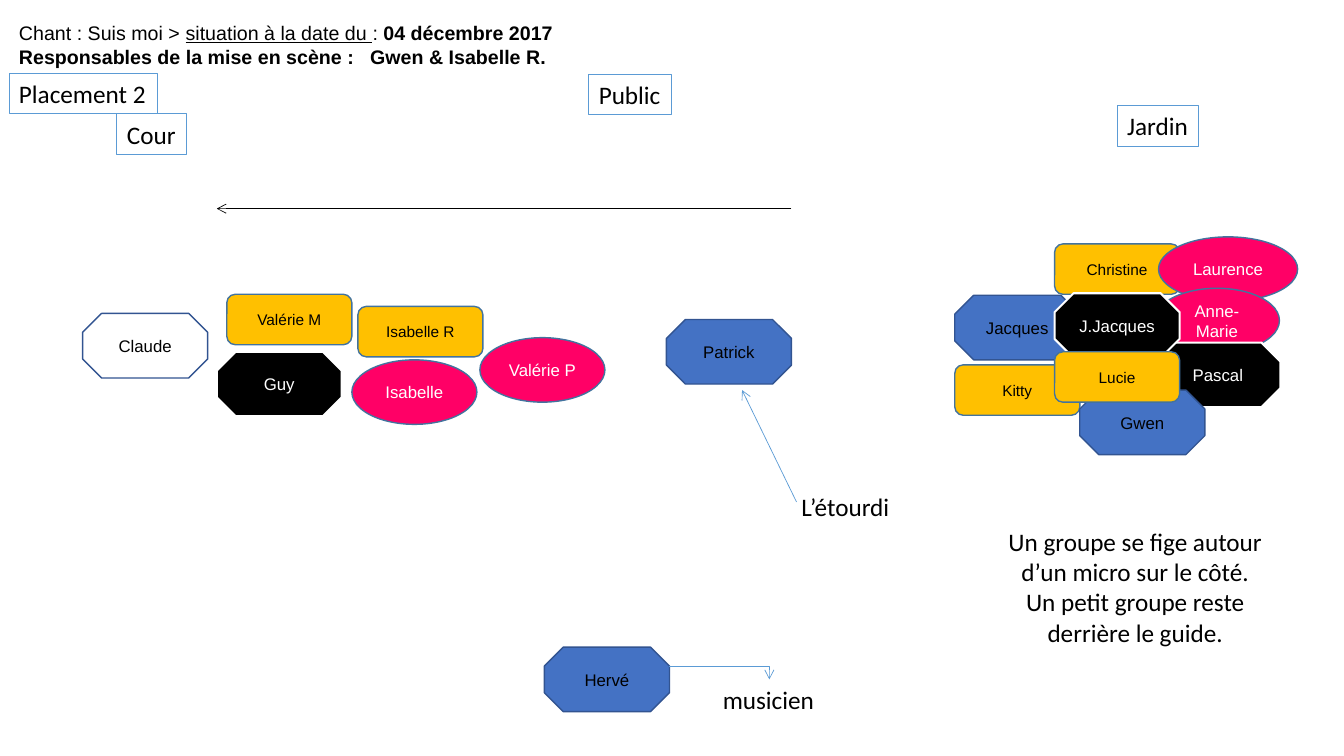
from lxml import etree
from pptx import Presentation
from pptx.dml.color import RGBColor
from pptx.enum.shapes import MSO_CONNECTOR, MSO_SHAPE
from pptx.enum.text import MSO_ANCHOR, MSO_AUTO_SIZE, PP_ALIGN
from pptx.oxml.ns import qn
from pptx.util import Inches, Pt

OCTAGON, OVAL = MSO_SHAPE.OCTAGON, MSO_SHAPE.OVAL
ROUNDED = MSO_SHAPE.ROUNDED_RECTANGLE
STRAIGHT, ELBOW = MSO_CONNECTOR.STRAIGHT, MSO_CONNECTOR.ELBOW
LEFT, CENTER = PP_ALIGN.LEFT, PP_ALIGN.CENTER

BLACK = RGBColor(0x00, 0x00, 0x00)
WHITE = RGBColor(0xFF, 0xFF, 0xFF)
BLUE = RGBColor(0x44, 0x72, 0xC4)
NAVY = RGBColor(0x32, 0x54, 0x91)
YELLOW = RGBColor(0xFF, 0xC0, 0x00)
PINK = RGBColor(0xFF, 0x00, 0x66)
STEEL = RGBColor(0x43, 0x73, 0x9E)
SKY = RGBColor(0x5B, 0x9B, 0xD5)

# Heading: paragraphs of (text, underline, bold)
HEADING = [
    [("Chant : Suis moi > ", False, False),
     ("situation à la date du ", True, False),
     (": ", False, False),
     ("04 décembre 2017", False, True)],
    [("Responsables de la mise en scène :   Gwen & Isabelle R.", False, True)],
]

# Labels: text, left, top, width, framed
LABELS = [
    ("Placement 2", 0.09, 0.73, 1.47, True),
    ("Public", 5.84, 0.74, 0.82, True),
    ("Jardin", 11.08, 1.05, 0.81, True),
    ("Cour", 1.16, 1.13, 0.69, True),
    ("L’étourdi", 7.85, 4.83, 1.08, False),
    ("musicien", 7.07, 6.74, 1.12, False),
]
STAGING = ["Un groupe se fige autour d’un micro sur le côté.",
           "Un petit groupe reste derrière le guide."]

# Voice groups: shape, height, fill, line, line width, text colour, text size
VOICES = {
    "blue": (OCTAGON, 0.64, BLUE, NAVY, 1, BLACK, 12),
    "white": (OCTAGON, 0.64, WHITE, NAVY, 1, BLACK, 12),
    "black": (OCTAGON, 0.64, BLACK, WHITE, 1.5, WHITE, 12),
    "yellow": (ROUNDED, 0.5, YELLOW, STEEL, 1, BLACK, 11),
    "pink": (OVAL, 0.64, PINK, STEEL, 1, WHITE, 12),
}
SINGER_WIDTH = 1.24
WIDER = {"Laurence": 1.38}

# Singers from back to front: name, voice, left, top
SINGERS = [
    ("Jacques", "blue", 9.47, 2.93),
    ("Guy", "black", 2.15, 3.49),
    ("Christine", "yellow", 10.46, 2.42),
    ("Isabelle", "pink", 3.49, 3.57),
    ("Kitty", "yellow", 9.47, 3.62),
    ("Valérie M", "yellow", 2.25, 2.92),
    ("Isabelle R", "yellow", 3.55, 3.04),
    ("Laurence", "pink", 11.49, 2.35),
    ("Valérie P", "pink", 4.76, 3.35),
    ("Anne-Marie", "pink", 11.45, 2.86),
    ("Pascal", "black", 11.46, 3.4),
    ("J.Jacques", "black", 10.46, 2.91),
    ("Patrick", "blue", 6.61, 3.17),
    ("Gwen", "blue", 10.71, 3.87),
    ("Lucie", "yellow", 10.46, 3.49),
    ("Claude", "white", 0.82, 3.11),
    ("Hervé", "blue", 5.4, 6.42),
]

# Arrows: kind, start, end, colour
ARROWS = [
    (STRAIGHT, (7.85, 2.07), (2.15, 2.07), BLACK),
    (STRAIGHT, (7.9, 4.98), (7.36, 3.87), SKY),
    (ELBOW, (6.64, 6.61), (7.63, 6.74), SKY),
]


def set_font(font, name, size, color):
    font.name, font.size = name, Pt(size)
    font.color.rgb = color


def add_text(page, lines, left, top, width, height, wrap, align=LEFT):
    box = page.shapes.add_textbox(*map(Inches, (left, top, width, height)))
    frame = box.text_frame
    frame.word_wrap = wrap
    frame.auto_size = MSO_AUTO_SIZE.SHAPE_TO_FIT_TEXT
    frame.text = "\n".join(lines)
    for para in frame.paragraphs:
        para.alignment = align
        set_font(para.font, "Calibri", 18, BLACK)
    return box


def add_heading(page):
    box = add_text(page, [""] * len(HEADING), 0.09, 0.16, 11.4, 0.57, True)
    for para, spans in zip(box.text_frame.paragraphs, HEADING):
        set_font(para.font, "Arial", 14, BLACK)
        for text, underline, bold in spans:
            span = para.add_run()
            span.text = text
            span.font.underline, span.font.bold = underline, bold


def add_singer(page, name, voice, left, top):
    kind, height, fill, line, weight, color, size = VOICES[voice]
    width = WIDER.get(name, SINGER_WIDTH)
    singer = page.shapes.add_shape(
        kind, *map(Inches, (left, top, width, height)))
    singer.shadow.inherit = False
    singer.fill.solid()
    singer.fill.fore_color.rgb = fill
    singer.line.color.rgb = line
    singer.line.width = Pt(weight)
    frame = singer.text_frame
    frame.word_wrap = True
    frame.vertical_anchor = MSO_ANCHOR.MIDDLE
    frame.text = name
    para = frame.paragraphs[0]
    para.alignment = CENTER
    set_font(para.font, "Arial", size, color)


def add_arrow(page, kind, start, end, color):
    arrow = page.shapes.add_connector(kind, *map(Inches, start + end))
    arrow.line.color.rgb = color
    arrow.line.width = Pt(0.5)
    properties = arrow._element.spPr
    if kind == ELBOW:  # a single bend
        properties.find(qn("a:prstGeom")).set("prst", "bentConnector2")
    etree.SubElement(properties.find(qn("a:ln")), qn("a:tailEnd"), type="arrow")
    etree.SubElement(properties, qn("a:effectLst"))


def main():
    deck = Presentation()
    deck.slide_width, deck.slide_height = Inches(13.33), Inches(7.5)
    page = deck.slides.add_slide(deck.slide_layouts[6])

    # Heading and staging notes
    add_heading(page)
    add_text(page, STAGING, 9.83, 5.17, 2.86, 1.31, True, CENTER)

    # Singers on stage
    for singer in SINGERS:
        add_singer(page, *singer)

    # Place labels
    for text, left, top, width, framed in LABELS:
        label = add_text(page, [text], left, top, width, 0.4, False)
        if framed:
            label.line.color.rgb = SKY
            label.line.width = Pt(0.75)

    # Movements
    for arrow in ARROWS:
        add_arrow(page, *arrow)

    deck.save("out.pptx")


if __name__ == "__main__":
    main()
